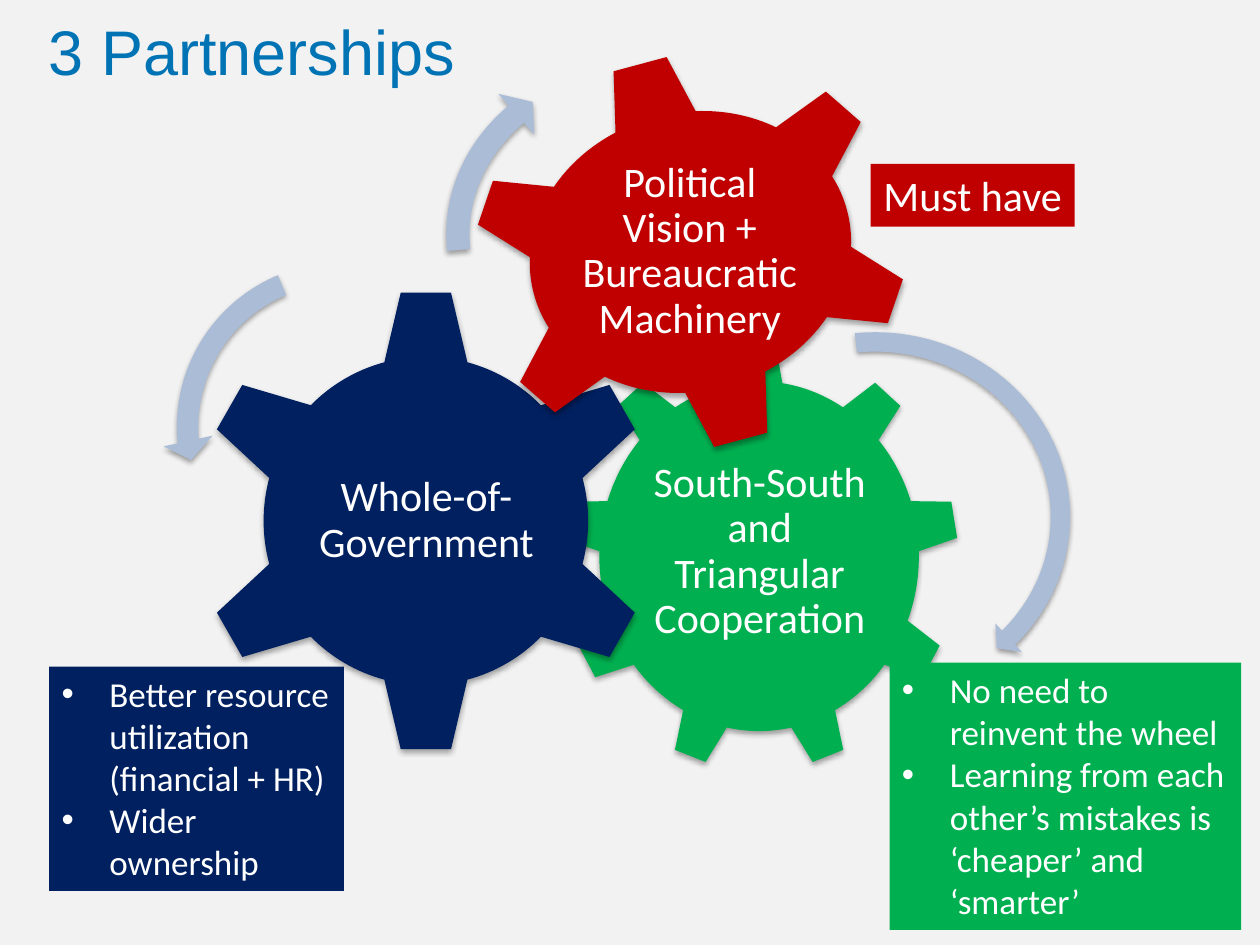
from dataclasses import dataclass

from lxml import etree
from pptx import Presentation
from pptx.dml.color import RGBColor
from pptx.enum.shapes import MSO_SHAPE
from pptx.enum.text import MSO_ANCHOR, MSO_AUTO_SIZE, PP_ALIGN
from pptx.oxml.ns import qn
from pptx.util import Inches, Pt

GEAR_SIX, GEAR_NINE = MSO_SHAPE.GEAR_6, MSO_SHAPE.GEAR_9
ARROW, LEFT_ARROW = MSO_SHAPE.CIRCULAR_ARROW, MSO_SHAPE.LEFT_CIRCULAR_ARROW
RECTANGLE = MSO_SHAPE.RECTANGLE
LEFT, CENTER = PP_ALIGN.LEFT, PP_ALIGN.CENTER
TOP, MIDDLE = MSO_ANCHOR.TOP, MSO_ANCHOR.MIDDLE
GROW = MSO_AUTO_SIZE.SHAPE_TO_FIT_TEXT
CELL = 0.1  # inches; the page is a grid of 100 columns by 75 rows


@dataclass(frozen=True)
class Theme:
    page: str = "F2F2F2"
    title: str = "0073B5"
    text: str = "FFFFFF"
    navy: str = "002060"
    green: str = "00B050"
    red: str = "C00000"
    arrow: str = "ABBCD7"
    heading_font: str = "Arial"
    body_font: str = "Calibri"
    heading_size: int = 36
    label_size: int = 24
    list_size: int = 20


def grid(*cells):
    return [Inches(cell * CELL) for cell in cells]


class SlideBuilder:
    def __init__(self, deck, theme):
        self.theme = theme
        self.page = deck.slides.add_slide(deck.slide_layouts[6])
        fill = self.page.background.fill
        fill.solid()
        fill.fore_color.rgb = RGBColor.from_string(theme.page)

    def shape(self, kind, place, color):
        shape = self.page.shapes.add_shape(kind, *grid(*place))
        shape.shadow.inherit = False
        shape.fill.solid()
        shape.fill.fore_color.rgb = RGBColor.from_string(color)
        shape.line.fill.background()
        return shape

    def soft_shadow(self, shape):
        effects = shape._element.spPr.find(qn("a:effectLst"))
        shadow = etree.SubElement(effects, qn("a:outerShdw"), blurRad=str(Pt(3.1)),
                                  dist=str(Pt(1.8)), dir="5400000", rotWithShape="0")
        color = etree.SubElement(shadow, qn("a:srgbClr"), val="000000")
        etree.SubElement(color, qn("a:alpha"), val="35000")

    def bullet(self, para):
        props = para._p.get_or_add_pPr()
        props.set("marL", str(Inches(0.38)))
        props.set("indent", str(Inches(-0.38)))
        etree.SubElement(props, qn("a:buFont"), typeface="Arial")
        etree.SubElement(props, qn("a:buChar"), char="•")

    def fill_text(self, box, lines, size, align=LEFT, anchor=MIDDLE, bullets=False,
                  spacing=1.0, font=None, color=None):
        frame = box.text_frame
        frame.word_wrap = True
        frame.vertical_anchor = anchor
        for index, line in enumerate(lines):
            para = frame.add_paragraph() if index else frame.paragraphs[0]
            para.alignment = align
            para.line_spacing = spacing
            if bullets:
                self.bullet(para)
            span = para.add_run()
            span.text = line
            style = {"name": font or self.theme.body_font, "size": Pt(size)}
            for name, value in style.items():
                setattr(span.font, name, value)
            span.font.color.rgb = RGBColor.from_string(color or self.theme.text)
        return frame

    def title(self, text, place):
        theme = self.theme
        box = self.page.shapes.add_textbox(*grid(*place))
        self.fill_text(box, [text], theme.heading_size, font=theme.heading_font,
                       color=theme.title)

    def gear(self, kind, place, color, text, text_place, rotation=0):
        gear = self.shape(kind, place, color)
        gear.rotation = rotation
        self.soft_shadow(gear)
        box = self.page.shapes.add_textbox(*grid(*text_place))
        frame = self.fill_text(box, [text], self.theme.label_size, CENTER, spacing=0.9)
        for side in ("left", "top", "right", "bottom"):
            setattr(frame, f"margin_{side}", Inches(0.03))

    def turn_arrow(self, kind, place, adjustments):
        arrow = self.shape(kind, place, self.theme.arrow)
        for index, value in enumerate(adjustments):
            arrow.adjustments[index] = value
        self.soft_shadow(arrow)

    def note(self, place, color, lines, size, **style):
        box = self.shape(RECTANGLE, place, color)
        self.fill_text(box, lines, size, **style).auto_size = GROW


def main():
    deck = Presentation()
    deck.slide_width, deck.slide_height = grid(100, 75)
    theme = Theme()
    slide = SlideBuilder(deck, theme)

    slide.title("3 Partnerships", (2.9, 0.2, 38.6, 7.6))

    # Interlocking gears, back to front
    slide.gear(GEAR_NINE, (44.4, 27.1, 31.7, 34.1), theme.green,
               "South-South and Triangular Cooperation", (50.8, 34.9, 19, 17.8))
    slide.gear(GEAR_SIX, (15.4, 22.8, 36.8, 37.1), theme.navy,
               "Whole-of-Government", (24.7, 32.2, 18.3, 18.3))
    slide.gear(GEAR_SIX, (37.2, 4.2, 35.2, 31.6), theme.red,
               "Political Vision + Bureaucratic Machinery",
               (45.1, 10.9, 19.3, 18.1), rotation=345)

    # Arrows showing the way each gear turns
    slide.turn_arrow(ARROW, (53.2, 25.6, 32.5, 30.8),
                     (0.05, 2.99, 25.34, 158.23, 0.05))
    slide.turn_arrow(LEFT_ARROW, (12.9, 19.7, 28.4, 28.4),
                     (0.06, 4.3, 104.89, 148.38, 0.07))
    slide.turn_arrow(ARROW, (34.2, 3.2, 34.7, 30.7),
                     (0.06, 3.94, 133.14, 105.08, 0.07))

    # Notes beside the gears
    slide.note((70.6, 52.6, 27.9, 21.2), theme.green,
               ["No need to reinvent the wheel",
                "Learning from each other’s mistakes is ‘cheaper’ and ‘smarter’"],
               theme.list_size, anchor=TOP, bullets=True)
    slide.note((3.9, 52.9, 23.4, 17.8), theme.navy,
               ["Better resource utilization (financial + HR)", "Wider ownership"],
               theme.list_size, anchor=TOP, bullets=True)
    slide.note((69.1, 13, 16.2, 5), theme.red, ["Must have"],
               theme.label_size, align=CENTER, anchor=TOP)

    deck.save("out.pptx")


if __name__ == "__main__":
    main()
